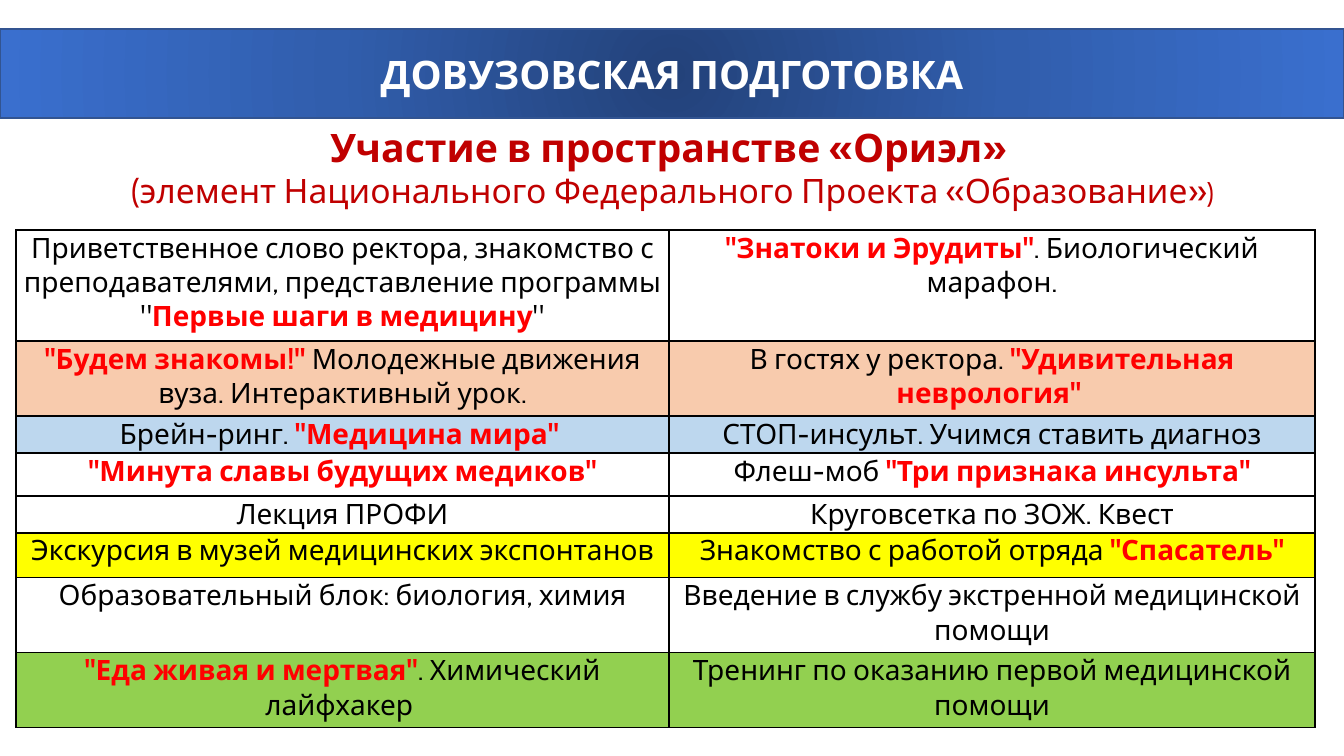
"""Build the slide on pre-university training: banner, subtitle and event table."""
from lxml.etree import SubElement
from pptx import Presentation
from pptx.dml.color import RGBColor
from pptx.enum.text import MSO_ANCHOR, PP_ALIGN
from pptx.oxml.ns import qn
from pptx.util import Pt

HEADING = "ДОВУЗОВСКАЯ ПОДГОТОВКА"
SUBTITLE = [
    ([("Участие в пространстве «Ориэл» ", 28)], True),
    ([("(элемент Национального Федерального Проекта «Образование»", 24), (")", 20)], False),
]
# Text between asterisks is emphasised.
EVENTS = [
    (111, None,
     'Приветственное слово ректора, знакомство с преподавателями, '
     'представление программы "*Первые шаги в медицину*"',
     '*"Знатоки и Эрудиты"*. Биологический марафон.'),
    (75, "peach",
     '*"Будем знакомы!"* Молодежные движения вуза. Интерактивный урок.',
     'В гостях у ректора. *"Удивительная неврология" *'),
    (37, "sky", 'Брейн-ринг. *"Медицина мира" *', 'СТОП-инсульт. Учимся ставить диагноз'),
    (43, None, '*"Минута славы будущих медиков"*', 'Флеш-моб *"Три признака инсульта"*'),
    (37, None, 'Лекция ПРОФИ', 'Круговсетка по ЗОЖ. Квест'),
    (45, "yellow", 'Экскурсия в музей медицинских экспонтанов',
     'Знакомство с работой отряда *"Спасатель"*'),
    (75, None, 'Образовательный блок: биология, химия',
     'Введение в службу экстренной медицинской помощи'),
    (75, "green", '*"Еда живая и мертвая"*. Химический лайфхакер ',
     'Тренинг по оказанию первой медицинской помощи'),
]
COLUMN_WIDTHS = [653, 646]
BANNER_STOPS = [(0, "banner_core"), (50, "banner_mid"), (100, "banner_edge")]
COLORS = {
    "banner_core": "23427A", "banner_mid": "315EAD", "banner_edge": "3A6FCE",
    "banner_line": "325491", "white": "FFFFFF", "black": "000000",
    "crimson": "C00000", "red": "FF0000", "peach": "F8CBAD", "sky": "BDD7EE",
    "yellow": "FFFF00", "green": "92D050",
}
FONT = "Cabin"


def px(length):
    return round(length * 914400 / 100.8)


def color(name):
    return RGBColor.from_string(COLORS[name])


def style(font, size, name, bold):
    font.name = FONT
    font.size = Pt(size)
    font.bold = bold
    font.color.rgb = color(name)


def add_radial_fill(shape):
    gradient = SubElement(shape._element.spPr, qn("a:gradFill"), rotWithShape="1")
    stops = SubElement(gradient, qn("a:gsLst"))
    for percent, name in BANNER_STOPS:
        stop = SubElement(stops, qn("a:gs"), pos=str(percent * 1000))
        SubElement(stop, qn("a:srgbClr"), val=COLORS[name])
    circle = SubElement(gradient, qn("a:path"), path="circle")
    SubElement(circle, qn("a:fillToRect"), l="50000", t="50000", r="50000", b="50000")


def add_borders(cell):
    properties = cell._tc.get_or_add_tcPr()
    for index, side in enumerate(("a:lnL", "a:lnR", "a:lnT", "a:lnB")):
        border = properties.makeelement(qn(side), {"w": str(Pt(1))})
        solid = SubElement(border, qn("a:solidFill"))
        SubElement(solid, qn("a:srgbClr"), val=COLORS["black"])
        properties.insert(index, border)


def fill_cell(cell, text, background):
    cell.margin_left = cell.margin_right = cell.margin_top = px(1)
    cell.margin_bottom = 0
    if background:
        cell.fill.solid()
        cell.fill.fore_color.rgb = color(background)
    else:
        cell.fill.background()
    add_borders(cell)
    paragraph = cell.text_frame.paragraphs[0]
    paragraph.alignment = PP_ALIGN.CENTER
    for index, part in enumerate(text.split("*")):
        if part:
            run = paragraph.add_run()
            run.text = part
            emphasised = index % 2 == 1
            style(run.font, 20, "red" if emphasised else "black", emphasised)


def add_banner(slide):
    banner = slide.shapes.title
    banner.left, banner.top, banner.width, banner.height = 0, px(29), px(1344), px(89)
    add_radial_fill(banner)
    banner.line.color.rgb = color("banner_line")
    banner.line.width = Pt(1)
    banner.text_frame.text = HEADING
    banner.text_frame.vertical_anchor = MSO_ANCHOR.MIDDLE
    paragraph = banner.text_frame.paragraphs[0]
    paragraph.alignment = PP_ALIGN.CENTER
    style(paragraph.font, 28, "white", True)


def add_subtitle(slide):
    frame = slide.shapes.add_textbox(px(8), px(118), px(1329), px(129)).text_frame
    frame.word_wrap = True
    for index, (parts, bold) in enumerate(SUBTITLE):
        paragraph = frame.add_paragraph() if index else frame.paragraphs[0]
        paragraph.alignment = PP_ALIGN.CENTER
        for text, size in parts:
            run = paragraph.add_run()
            run.text = text
            style(run.font, size, "crimson", bold)


def add_events(slide):
    height = sum(event[0] for event in EVENTS)
    events = slide.shapes.add_table(
        len(EVENTS), len(COLUMN_WIDTHS), px(16), px(230), px(sum(COLUMN_WIDTHS)), px(height)
    ).table
    events.first_row = events.horz_banding = False
    for column, width in zip(events.columns, COLUMN_WIDTHS):
        column.width = px(width)
    for row, (row_height, background, *texts) in zip(events.rows, EVENTS):
        row.height = px(row_height)
        for cell, text in zip(row.cells, texts):
            fill_cell(cell, text, background)


def main():
    deck = Presentation()
    deck.slide_width, deck.slide_height = px(1344), px(756)
    slide = deck.slides.add_slide(deck.slide_layouts[5])
    add_banner(slide)
    add_subtitle(slide)
    add_events(slide)
    deck.save("out.pptx")


if __name__ == "__main__":
    main()
